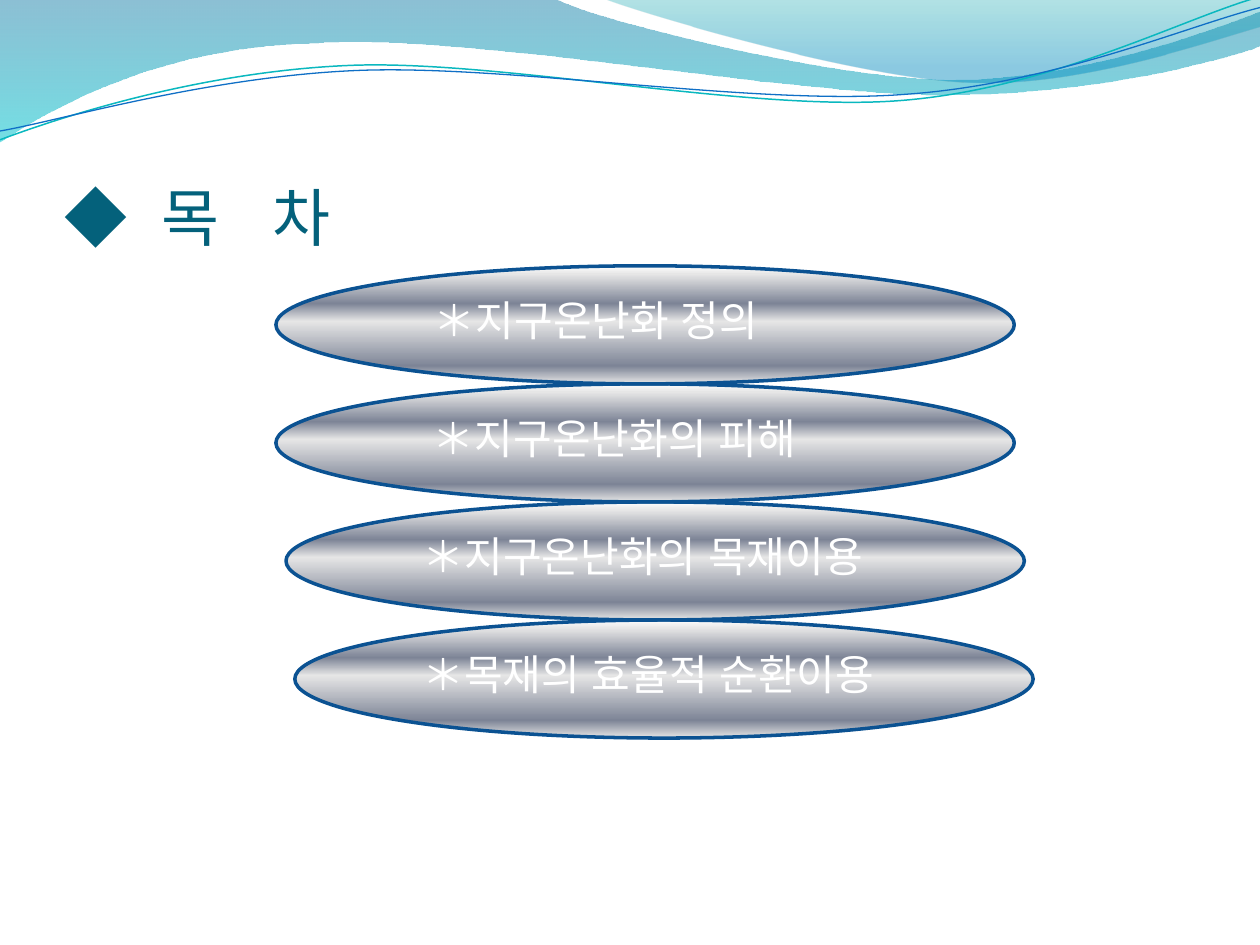
from dataclasses import dataclass
from typing import Optional

from lxml.etree import SubElement
from pptx import Presentation
from pptx.dml.color import RGBColor
from pptx.enum.shapes import MSO_SHAPE
from pptx.enum.text import MSO_ANCHOR, PP_ALIGN
from pptx.oxml.ns import qn
from pptx.util import Emu, Inches, Pt

# The slide is a grid of 100 columns by 75 rows of square cells
COLS, ROWS = 100, 75
CELL = Inches(10) // COLS

COLORS = {
    "title": "04617B", "label": "FFFFFF", "outline": "0B5292",
    "deep": "0074A1", "aqua": "00C6CF", "teal": "00A1A9", "sky": "008BBF",
    "teal_line": "0AB8BF", "blue_line": "0F6FC6",
    "white": "FFFFFF", "silver": "E6E6E6", "steel": "7D8496",
}


@dataclass
class Stop:
    pos: int
    color: str
    opacity: int = 100


@dataclass
class Wave:
    """Start point, then segments of one point (line) or three (Bezier)."""
    start: tuple
    segments: list
    stops: Optional[list] = None
    line: Optional[str] = None
    width: float = 0


@dataclass
class Topic:
    text: str
    left: float
    indent: float


WAVES = [
    Wave((0, 0), [
        (44, -0.1),
        (47.6, 1.7, 66.4, 6.3, 75.8, 6.3), (85.3, 6.3, 95.8, 2.6, 100, 0.9),
        (100.1, 3.6),
        (98.3, 4.4, 87, 7.6, 74.6, 7.5), (62.2, 7.5, 38.2, 2.8, 25.7, 3.4),
        (12.9, 3.6, 4.6, 8.3, -0.1, 11.3),
    ], stops=[Stop(0, "deep", 45), Stop(100, "aqua", 55)]),
    Wave((47.9, -0.1), [
        (50.9, 1.1, 68.2, 6.2, 76.9, 6.5), (85.6, 6.9, 96.1, 3.2, 100, 2.1),
        (100, 0),
    ], stops=[Stop(0, "teal", 30), Stop(80, "sky", 45)]),
    Wave((0, 11.1), [
        (4.8, 9.3, 15.8, 5.7, 27.7, 5.2), (39.5, 4.7, 59.3, 8.9, 71.3, 8),
        (83.3, 7.1, 93.8, 1.5, 99.8, -0.2),
    ], line="teal_line", width=0.85),
    Wave((0, 10.4), [
        (4.7, 9.6, 16.4, 6.1, 28.3, 5.6), (40.3, 5.1, 59.7, 8.4, 71.7, 7.5),
        (83.6, 6.7, 94.1, 2.1, 100, 0.6),
    ], line="blue_line", width=0.75),
]

METAL = [Stop(0, "white"), Stop(7, "silver"), Stop(32, "steel"),
         Stop(47, "silver"), Stop(85, "steel"), Stop(100, "silver")]

TOPICS = [
    Topic("＊지구온난화 정의", 21.9, 0),
    Topic("＊지구온난화의 피해", 21.9, 2.9),
    Topic("＊지구온난화의 목재이용", 22.7, 7.4),
    Topic("＊목재의 효율적 순환이용", 23.4, 8.3),
]
TOPIC_TOP, TOPIC_W, TOPIC_H = 21.1, 58.6, 9.37


def cells(n: float) -> Emu:
    return Emu(round(n * CELL))


def rgb(name: str) -> RGBColor:
    return RGBColor.from_string(COLORS[name])


def fill_gradient(sp, stops: list) -> None:
    sp.fill.gradient()
    sp.fill.gradient_angle = 270
    gs_list = next(sp.element.spPr.iter(qn("a:gsLst")))
    for old in list(gs_list):
        gs_list.remove(old)
    for stop in stops:
        gs = SubElement(gs_list, qn("a:gs"), pos=str(stop.pos * 1000))
        clr = SubElement(gs, qn("a:srgbClr"), val=COLORS[stop.color])
        if stop.opacity < 100:
            SubElement(clr, qn("a:alpha"), val=str(stop.opacity * 1000))


def bend(sp, wave: Wave) -> None:
    """Turn the freeform's straight segments into Bezier curves."""
    lines = list(sp.element.spPr.iter(qn("a:lnTo")))
    for ln, seg in zip(lines, wave.segments):
        if len(seg) == 2:
            continue
        ln.remove(ln[0])
        curve = SubElement(ln.getparent(), qn("a:cubicBezTo"))
        for x, y in zip(seg[::2], seg[1::2]):
            SubElement(curve, qn("a:pt"), x=str(cells(x) - sp.left),
                       y=str(cells(y) - sp.top))
        ln.getparent().replace(ln, curve)


def draw_wave(s, wave: Wave) -> None:
    x, y = wave.start
    builder = s.shapes.build_freeform(cells(x), cells(y))
    ends = [(cells(seg[-2]), cells(seg[-1])) for seg in wave.segments]
    builder.add_line_segments(ends, close=wave.stops is not None)
    sp = builder.convert_to_shape()
    bend(sp, wave)
    sp.shadow.inherit = False
    if wave.stops:
        fill_gradient(sp, wave.stops)
        sp.line.fill.background()
    else:
        sp.fill.background()
        sp.line.color.rgb = rgb(wave.line)
        sp.line.width = Pt(wave.width)


def set_font(p, name: str, size: float, color: str) -> None:
    p.font.name, p.font.size = name, Pt(size)
    p.font.color.rgb = rgb(color)
    # The same typeface for East Asian text
    SubElement(p.font._element, qn("a:ea"), typeface=name)


def draw_title(s) -> None:
    tf = s.shapes.add_textbox(cells(5), cells(7.7), cells(90), cells(12.5)).text_frame
    tf.word_wrap = True
    tf.vertical_anchor = MSO_ANCHOR.BOTTOM
    tf.margin_left = cells(0.1)
    tf.margin_right = tf.margin_bottom = 0
    p = tf.paragraphs[0]
    p.text = "◆\t목\t차"
    set_font(p, "Calibri", 36, "title")
    # Tab stops set the gaps; they come before the paragraph's font
    tabs = SubElement(p._p.get_or_add_pPr(), qn("a:tabLst"))
    for pos in (7.7, 16.5):
        SubElement(tabs, qn("a:tab"), pos=str(cells(pos)), algn="l")
    tabs.getparent().insert(0, tabs)


def draw_ellipse(s, row: int, topic: Topic) -> None:
    sp = s.shapes.add_shape(MSO_SHAPE.OVAL, cells(topic.left),
                            cells(TOPIC_TOP + row * TOPIC_H),
                            cells(TOPIC_W), cells(TOPIC_H))
    sp.shadow.inherit = False
    fill_gradient(sp, METAL)
    sp.line.color.rgb = rgb("outline")
    sp.line.width = Pt(2)


def draw_topics(s) -> None:
    tf = s.shapes.add_textbox(cells(2.3), cells(18), cells(90), cells(51.5)).text_frame
    tf.word_wrap = True
    tf.margin_top = 0
    for i, topic in enumerate(TOPICS):
        p = tf.add_paragraph() if i else tf.paragraphs[0]
        p.text = topic.text
        p.alignment = PP_ALIGN.CENTER
        # One line per ellipse
        p.line_spacing = Pt(67.5)
        p._p.get_or_add_pPr().set("marL", str(cells(topic.indent)))
        set_font(p, "Arial", 24, "label")


def main() -> None:
    prs = Presentation()
    prs.slide_width, prs.slide_height = cells(COLS), cells(ROWS)
    s = prs.slides.add_slide(prs.slide_layouts[6])

    # Waves along the top
    for wave in WAVES:
        draw_wave(s, wave)

    # Upper ellipses lie in front of lower ones
    for row, topic in reversed(list(enumerate(TOPICS))):
        draw_ellipse(s, row, topic)

    # Title and contents
    draw_title(s)
    draw_topics(s)

    prs.save("out.pptx")


if __name__ == "__main__":
    main()
